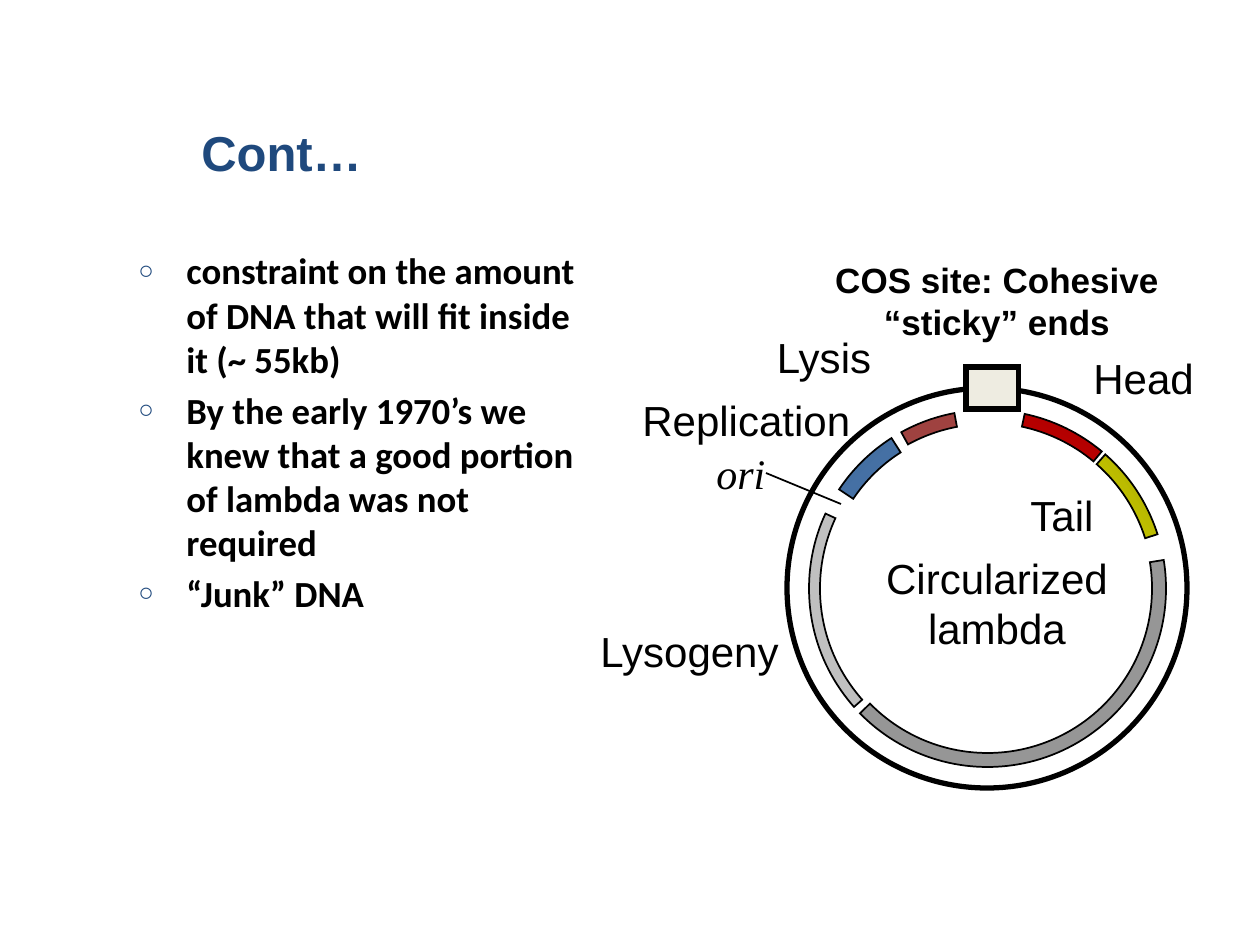
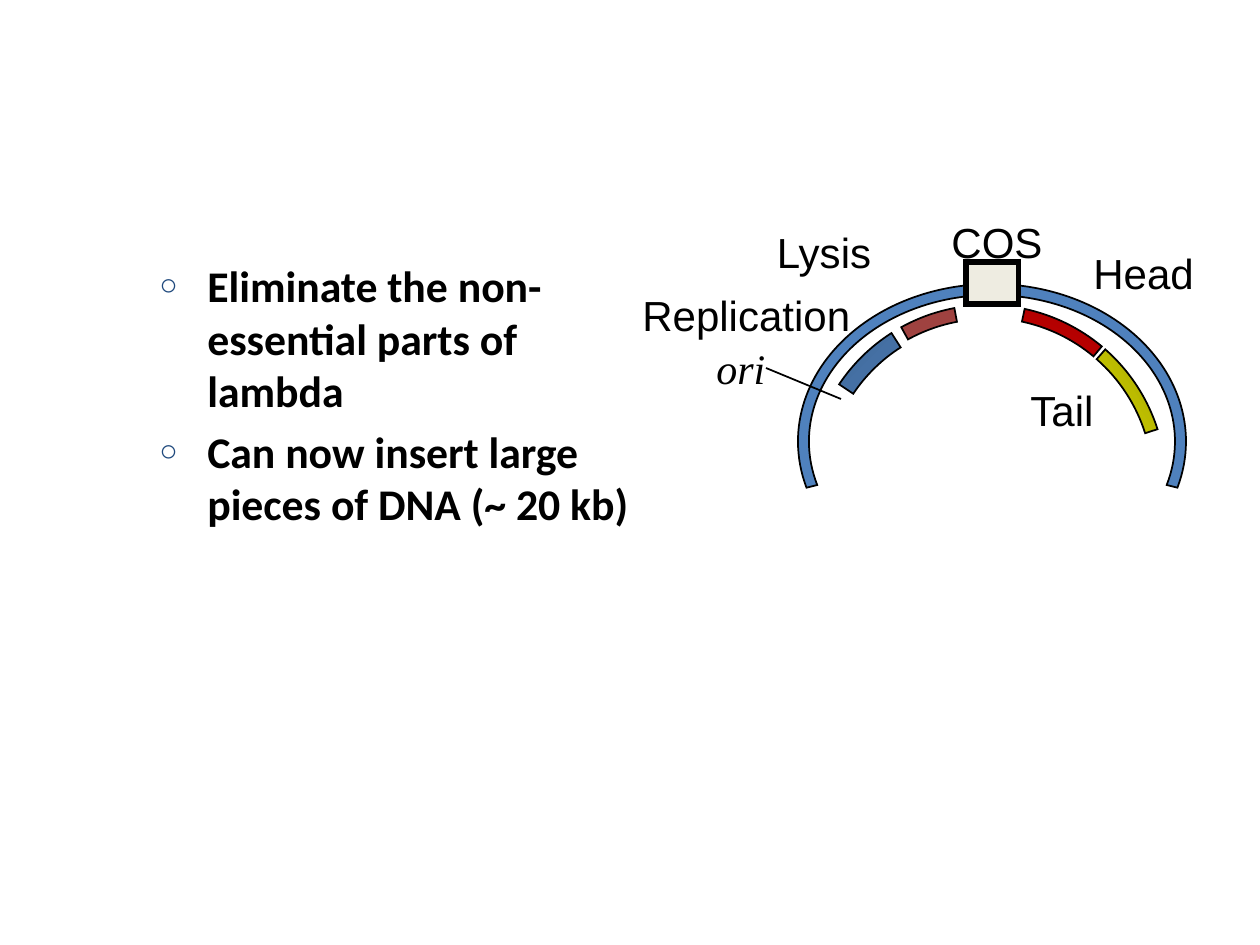
from copy import deepcopy

from lxml.etree import SubElement
from pptx import Presentation
from pptx.dml.color import RGBColor
from pptx.enum.shapes import MSO_CONNECTOR as Connector, MSO_SHAPE as Shape
from pptx.enum.text import MSO_ANCHOR as Anchor, PP_ALIGN as Align
from pptx.oxml.ns import qn
from pptx.util import Emu, Pt

EMU_PER_PX = 914400 / 126
BLACK, NAVY, CREAM, BLUE = "000000", "1F497D", "EEECE1", "4F81BD"
ARC_LEFT, ARC_TOP, ARC_SIZE = 809, 410, 357

GENES = [
    (160.2, 18.2, 14, ["893937", "C0504D", "893937"]),
    (236.8, 31, 13, ["767600", "FFFF00", "767600"]),
    (205.9, 27.8, 13, ["760000", "FF0000", "760000"]),
    (135.6, 23.7, 17, ["395C87", BLUE, "395C87"]),
]
SPARE_GENES = [(333.2, 144.8, 14, ["969696"]), (81.6, 66.4, 11, ["C0C0C0"])]
GENE_LABELS = [
    ("Lysis", 745, 325, 158, Align.CENTER),
    ("Head", 1081, 346, 136, Align.LEFT),
    ("Tail", 1018, 483, 95, Align.LEFT),
    ("Replication", 630, 388, 252, Align.LEFT),
]


def px(*lengths):
    return [Emu(round(length * EMU_PER_PX)) for length in lengths]


def rgb(color):
    return RGBColor.from_string(color)


def set_font(para, size, name="Arial", color=BLACK, bold=False, italic=False):
    font = para.font
    font.size, font.name, font.bold, font.italic = Pt(size), name, bold, italic
    font.color.rgb = rgb(color)


def add_box(slide, area):
    box = slide.shapes.add_textbox(*px(*area))
    box.text_frame.word_wrap = True
    return box.text_frame


def add_label(slide, text, area, size=24, align=Align.LEFT, **font):
    frame = add_box(slide, area)
    para = frame.paragraphs[0]
    para.text, para.alignment = text, align
    set_font(para, size, **font)
    return frame


def add_bullets(slide, area, texts, size, gap):
    frame = add_box(slide, area)
    for index, text in enumerate(texts):
        para = frame.paragraphs[0] if index == 0 else frame.add_paragraph()
        para.text = text
        if index:
            para.space_before = Pt(gap)
        properties = para._p.get_or_add_pPr()
        indent = px(48)[0]
        properties.set("marL", str(indent))
        properties.set("indent", str(-indent))
        color = SubElement(properties, qn("a:buClr"))
        SubElement(color, qn("a:srgbClr"), val=NAVY)
        SubElement(properties, qn("a:buSzPct"), val="70000")
        SubElement(properties, qn("a:buFont"), typeface="Arial")
        SubElement(properties, qn("a:buChar"), char="○")
        set_font(para, size, name="Calibri", bold=True)


def add_preset(slide, kind, area, colors, width):
    shape = slide.shapes.add_shape(kind, *px(*area))
    shape.shadow.inherit = False
    shape.line.color.rgb = rgb(BLACK)
    shape.line.width = Pt(width)
    properties = shape._element.spPr
    SubElement(properties.find(qn("a:ln")), qn("a:miter"), lim="800000")
    fill = shape.fill
    if not colors:
        fill.background()
    elif len(colors) == 1:
        fill.solid()
        fill.fore_color.rgb = rgb(colors[0])
    else:
        fill.gradient()
        fill.gradient_angle = 270
        stops = properties.find(qn("a:gradFill")).find(qn("a:gsLst"))
        stops.append(deepcopy(stops[0]))
        for index, (stop, color) in enumerate(zip(fill.gradient_stops, colors)):
            stop.position = index / (len(colors) - 1)
            stop.color.rgb = rgb(color)
    return shape


def add_arc(slide, area, start, end, thickness, colors):
    arc = add_preset(slide, Shape.BLOCK_ARC, area, colors, 1)
    arc.adjustments[0] = start * 0.6
    arc.adjustments[1] = end * 0.6
    arc.adjustments[2] = thickness / min(area[2:])
    return arc


def add_gene(slide, rise, rotation, sweep, thickness, colors):
    area = (ARC_LEFT, ARC_TOP - rise, ARC_SIZE, ARC_SIZE)
    gene = add_arc(slide, area, 90 - sweep / 2, 90 + sweep / 2, thickness, colors)
    gene.rotation = rotation


def add_line(slide, start, end):
    line = slide.shapes.add_connector(Connector.STRAIGHT, *px(*start, *end))
    line.line.color.rgb = rgb(BLACK)
    line.line.width = Pt(1)
    SubElement(line._element.spPr, qn("a:effectLst"))


def add_lambda_map(slide, genes, rise=0):
    add_preset(slide, Shape.RECTANGLE, (966, 367 - rise, 53, 42), [CREAM], 3)
    for gene in genes:
        add_gene(slide, rise, *gene)
    for text, left, top, width, align in GENE_LABELS:
        add_label(slide, text, (left, top - rise, width, 63), align=align)
    add_line(slide, (766, 473 - rise), (841, 504 - rise))
    origin = add_label(slide, "ori", (704, 441 - rise, 74, 63),
                       name="Times New Roman", italic=True)
    origin.word_wrap = False


def build_constraint_slide(slide):
    title = add_label(slide, "Cont…", (189, 73, 1071, 158), 28, color=NAVY, bold=True)
    title.vertical_anchor = Anchor.MIDDLE
    add_bullets(slide, (126, 242, 462, 588), [
        "constraint on the amount of DNA that will fit inside it (~ 55kb)",
        "By the early 1970’s we knew that a good portion of lambda was not required",
        "“Junk” DNA",
    ], 21, 4)
    add_preset(slide, Shape.OVAL, (787, 388, 400, 400), [], 3)
    add_label(slide, "COS site: Cohesive “sticky” ends", (808, 252, 378, 97), 20,
              Align.CENTER, bold=True)
    add_lambda_map(slide, SPARE_GENES + GENES)
    add_label(slide, "Lysogeny", (588, 619, 210, 63))
    add_label(slide, "Circularized lambda", (871, 546, 252, 113), align=Align.CENTER)


def build_insert_slide(slide):
    add_bullets(slide, (147, 253, 504, 577), [
        "Eliminate the non-essential parts of lambda",
        "Can now insert large pieces of DNA (~ 20 kb)",
    ], 25, 4.5)
    add_arc(slide, (798, 284, 388, 315), 166, 14, 11, [BLUE])
    add_label(slide, "COS", (913, 210, 168, 63), align=Align.CENTER)
    add_lambda_map(slide, GENES, rise=105)


def main():
    deck = Presentation()
    deck.slide_width, deck.slide_height = px(1260, 945)
    for build in (build_constraint_slide, build_insert_slide):
        build(deck.slides.add_slide(deck.slide_layouts[6]))
    deck.save("out.pptx")


if __name__ == "__main__":
    main()
